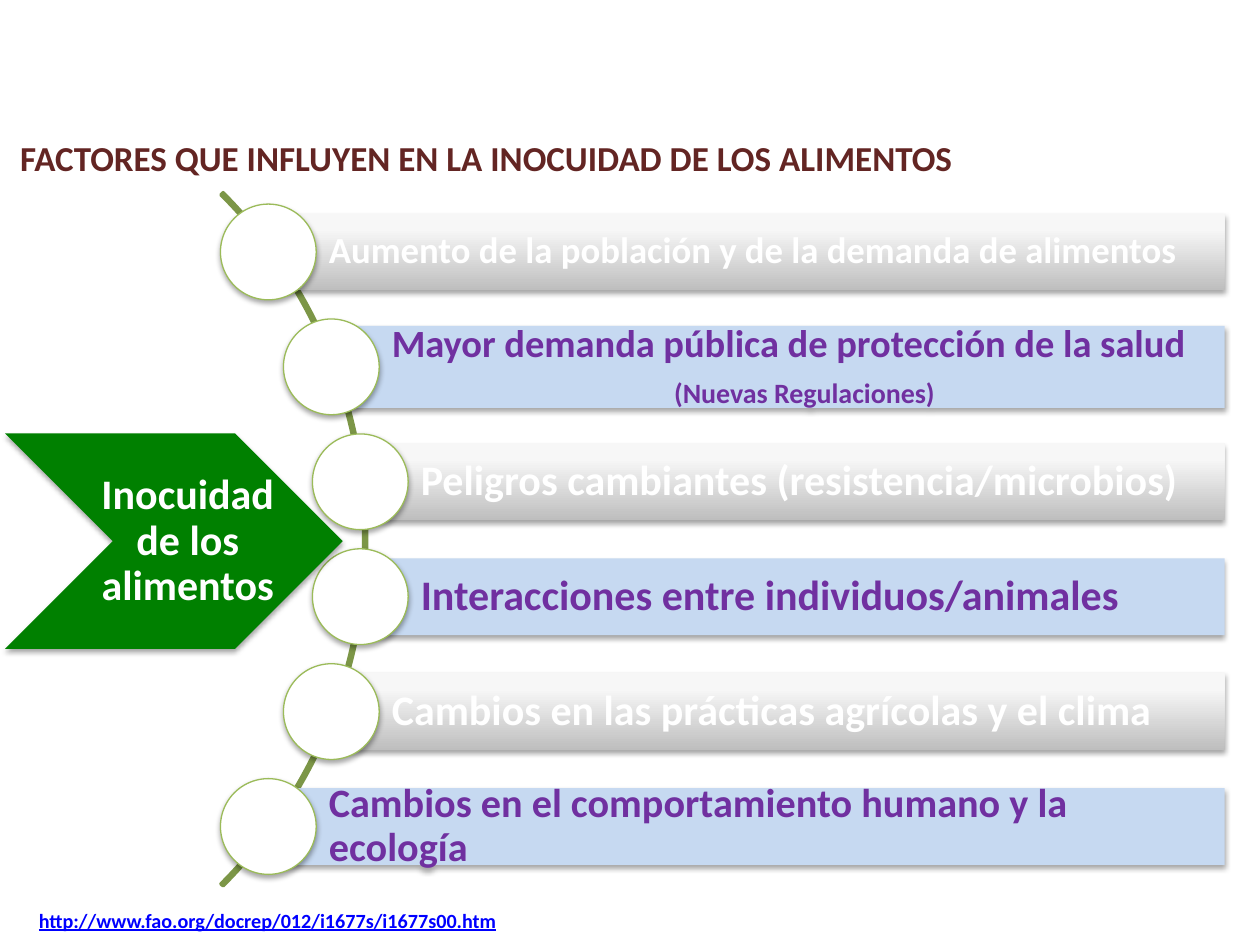
from copy import deepcopy
from lxml.etree import SubElement
from pptx import Presentation
from pptx.dml.color import RGBColor
from pptx.enum.shapes import MSO_SHAPE as Preset
from pptx.enum.text import MSO_ANCHOR as Anchor, MSO_AUTO_SIZE as AutoSize, PP_ALIGN as Align
from pptx.oxml.ns import qn
from pptx.util import Inches, Pt

TITLE = "FACTORES QUE INFLUYEN EN LA INOCUIDAD DE LOS ALIMENTOS"
CENTRAL_TOPIC = "Inocuidad de los alimentos"
SOURCE_URL = "http://www.fao.org/docrep/012/i1677s/i1677s00.htm"
FACTORS = [
    {"lines": [("Aumento de la población y de la demanda de alimentos", 21)], "left": 2.13},
    {"lines": [("Mayor demanda pública de protección de la salud", 22),
               ("(Nuevas Regulaciones)", 16)], "left": 2.63, "height": 0.65},
    {"lines": [("Peligros cambiantes (resistencia/microbios)", 24)], "left": 2.86},
    {"lines": [("Interacciones entre individuos/animales", 24)], "left": 2.86},
    {"lines": [("Cambios en las prácticas agrícolas y el clima", 24)], "left": 2.63},
    {"lines": [("Cambios en el comportamiento humano y la ecología", 23)], "left": 2.13},
]
GRAY_STOPS = [(0, "BEBEBE"), (0.8, "F7F7F7"), (1, "F8F8F8")]
WHITE, PURPLE, BLUE = "FFFFFF", "7030A0", "C6D9F1"
FIRST_CENTER, PITCH, RIGHT = 2.0, 0.912, 9.72
BAR_HEIGHT, CIRCLE = 0.61, 0.76


def rgb(value):
    """Turn a hex string into a colour."""
    return RGBColor.from_string(value)


def write(shape, lines, color, align=Align.LEFT, anchor=Anchor.MIDDLE,
          insets=(0.1, 0.05, 0.1, 0.05), spacing=1.0, after=0, underline=False):
    """Fill a shape with (text, size) paragraphs, centring those after the first."""
    frame = shape.text_frame
    frame.word_wrap = True
    frame.auto_size = AutoSize.NONE
    frame.vertical_anchor = anchor
    (frame.margin_left, frame.margin_top,
     frame.margin_right, frame.margin_bottom) = map(Inches, insets)
    for index, (text, size) in enumerate(lines):
        paragraph = frame.add_paragraph() if index else frame.paragraphs[0]
        paragraph.alignment = Align.CENTER if index else align
        paragraph.line_spacing = spacing
        paragraph.space_before = Pt(0)
        paragraph.space_after = Pt(round(after * size, 1))
        run = paragraph.add_run()
        run.text = text
        font = run.font
        font.name, font.size, font.bold = "Calibri", Pt(size), True
        font.underline = underline
        font.color.rgb = rgb(color)


def add_shape(slide, preset, box, fill=None, line=None, width=0.75, shadow=True):
    """Add a preset shape with a solid, gradient or empty fill."""
    shape = slide.shapes.add_shape(preset, *map(Inches, box))
    shape.shadow.inherit = False
    if fill is None:
        shape.fill.background()
    elif isinstance(fill, str):
        shape.fill.solid()
        shape.fill.fore_color.rgb = rgb(fill)
    else:
        shape.fill.gradient()
        shape.fill.gradient_angle = 90
        stop_list = next(shape._element.spPr.iter(qn("a:gsLst")))
        stop_list.append(deepcopy(stop_list[0]))
        for stop, (position, color) in zip(shape.fill.gradient_stops, fill):
            stop.position = position
            stop.color.rgb = rgb(color)
    if line:
        shape.line.color.rgb = rgb(line)
        shape.line.width = Pt(width)
    else:
        shape.line.fill.background()
    if shadow:
        effects = shape._element.spPr.find(qn("a:effectLst"))
        outer = SubElement(effects, qn("a:outerShdw"), blurRad=str(Pt(3.1)),
                           dist=str(Pt(1.8)), dir="5400000", rotWithShape="0")
        color = SubElement(outer, qn("a:srgbClr"), val="000000")
        SubElement(color, qn("a:alpha"), val="35000")
    return shape


def add_factor(slide, index, factor):
    """Draw one factor bar with the circle on its left edge."""
    center = FIRST_CENTER + index * PITCH
    left, height = factor["left"], factor.get("height", BAR_HEIGHT)
    fill, color = (BLUE, PURPLE) if index % 2 else (GRAY_STOPS, WHITE)
    bar = add_shape(slide, Preset.RECTANGLE,
                    (left, center - height / 2, RIGHT - left, height), fill)
    write(bar, factor["lines"], color, insets=(0.48, 0.06, 0.06, 0.06), spacing=0.9, after=0.35)
    add_shape(slide, Preset.OVAL, (left - CIRCLE / 2, center - CIRCLE / 2, CIRCLE, CIRCLE),
              WHITE, line="9BBB59")


def main():
    """Build the slide and save it."""
    presentation = Presentation()
    presentation.slide_width, presentation.slide_height = Inches(10), Inches(7.5)
    slide = presentation.slides.add_slide(presentation.slide_layouts[5])

    title = slide.shapes.title
    title.left, title.top, title.width, title.height = map(Inches, (0.06, 1.03, 7.7, 0.44))
    write(title, [(TITLE, 20)], "632523")

    arc = add_shape(slide, Preset.BLOCK_ARC, (-4.87, 0.39, 7.78, 7.78),
                    line="7C9647", width=2, shadow=False)
    for index, value in enumerate((189, 27, 0.003)):
        arc.adjustments[index] = value
    for index, factor in enumerate(FACTORS):
        add_factor(slide, index, factor)

    source = slide.shapes.add_textbox(*map(Inches, (0.21, 7.16, 4.04, 0.29)))
    write(source, [(SOURCE_URL, 11.5)], "0000FF", anchor=Anchor.TOP, underline=True)

    add_shape(slide, Preset.CHEVRON, (0.04, 3.44, 2.68, 1.71), "008000")
    topic = slide.shapes.add_textbox(*map(Inches, (0.68, 3.71, 1.62, 1.19)))
    write(topic, [(CENTRAL_TOPIC, 24)], WHITE, align=Align.CENTER, anchor=Anchor.TOP,
          spacing=0.9, after=0.35)

    presentation.save("out.pptx")


if __name__ == "__main__":
    main()
